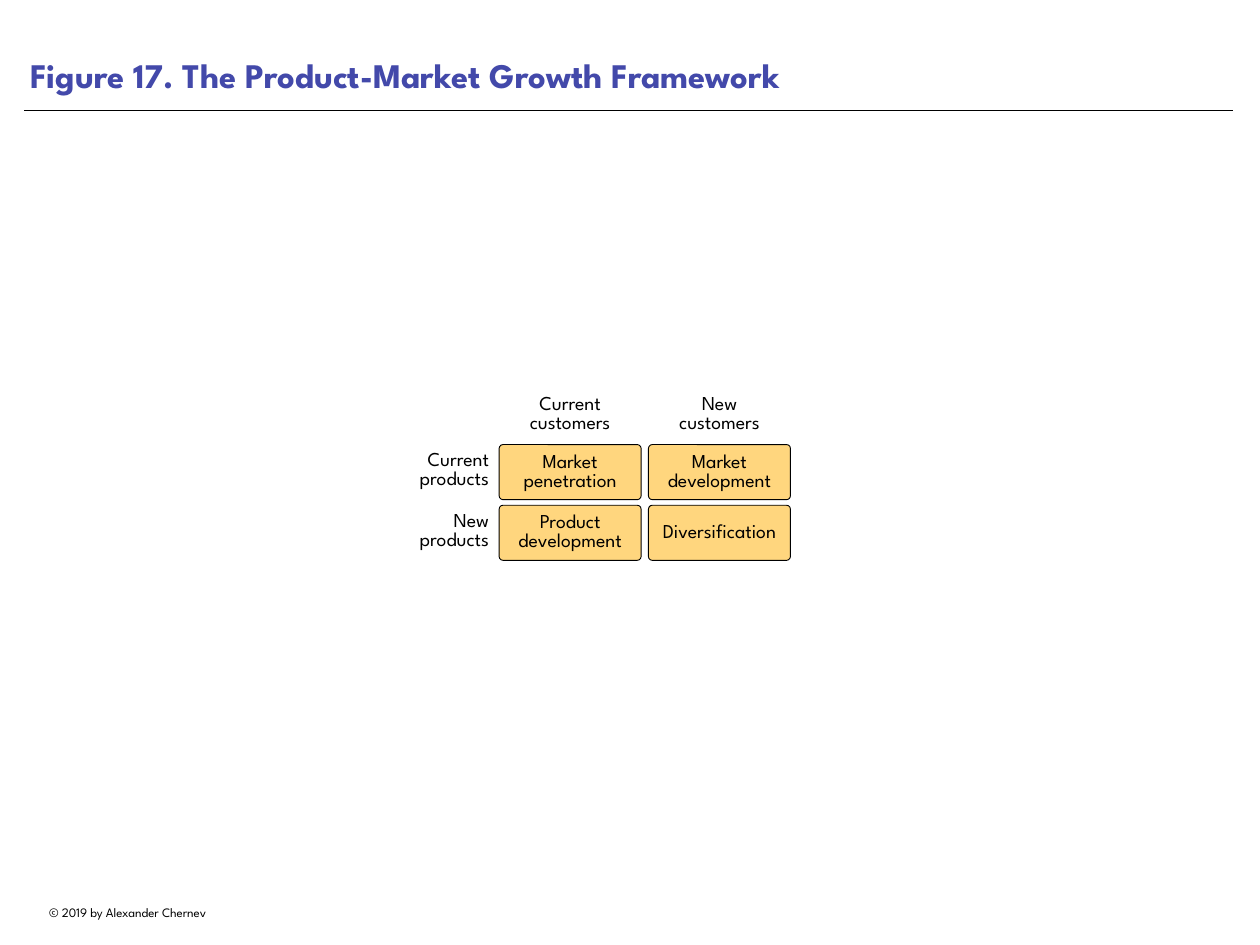
"""Build the product-market growth framework slide."""
from lxml.etree import SubElement
from pptx import Presentation
from pptx.dml.color import RGBColor
from pptx.enum.shapes import MSO_CONNECTOR, MSO_SHAPE
from pptx.enum.text import MSO_ANCHOR, PP_ALIGN
from pptx.oxml.ns import qn
from pptx.util import Cm, Pt

TITLE = "Figure 17. The Product-Market Growth Framework"
COPYRIGHT = "© 2019 by Alexander Chernev"
CUSTOMERS = ["Current customers", "New customers"]
PRODUCTS = ["Current products", "New products"]
STRATEGIES = [
    ["Market penetration", "Market development"],
    ["Product development", "Diversification"],
]

COLORS = {"title": "4349AA", "text": "000000", "line": "000000", "cell": "FFD67E"}
FONT = "League Spartan"
LABEL = {"size": 16, "spacing": 0.8, "inset": 0.1}

GRID_LEFT, GRID_TOP = 14.31, 12.75
CELL_WIDTH, CELL_HEIGHT = 4.07, 1.58
COLUMN_STEP, ROW_STEP = 4.28, 1.74
LABEL_HEIGHT = 1.3
CUSTOMER_TOP, CUSTOMER_WIDTH = 11.23, 3.61
PRODUCT_LEFT, PRODUCT_WIDTH = 11.43, 2.69
PRODUCT_OFFSET = 0.1
MARGIN_LEFT, CONTENT_WIDTH, RULE_TOP = 0.69, 34.67, 3.15


def color(name):
    return RGBColor.from_string(COLORS[name])


def write(shape, text, size, align=PP_ALIGN.CENTER, anchor=MSO_ANCHOR.MIDDLE,
          tint="text", bold=False, spacing=1.0, inset=0.18, wrap=True):
    frame = shape.text_frame
    margin = Cm(inset)
    frame_format = {
        "word_wrap": wrap, "vertical_anchor": anchor,
        "margin_left": margin, "margin_right": margin,
        "margin_top": margin, "margin_bottom": margin,
    }
    paragraph = frame.paragraphs[0]
    paragraph.text = text
    font = paragraph.runs[0].font
    formats = [
        (frame, frame_format),
        (paragraph, {"alignment": align, "line_spacing": spacing}),
        (font, {"name": FONT, "size": Pt(size), "bold": bold}),
    ]
    for target, values in formats:
        for name, value in values.items():
            setattr(target, name, value)
    font.color.rgb = color(tint)


def add_text(slide, text, left, top, width, height, **text_format):
    box = slide.shapes.add_textbox(Cm(left), Cm(top), Cm(width), Cm(height))
    write(box, text, **text_format)


def add_rule(slide):
    rule = slide.shapes.add_connector(
        MSO_CONNECTOR.STRAIGHT, Cm(MARGIN_LEFT), Cm(RULE_TOP),
        Cm(MARGIN_LEFT + CONTENT_WIDTH), Cm(RULE_TOP))
    rule.line.color.rgb = color("line")
    rule.line.width = Pt(0.5)
    SubElement(rule._element.spPr, qn("a:effectLst"))


def add_cell(slide, text, left, top):
    cell = slide.shapes.add_shape(
        MSO_SHAPE.ROUNDED_RECTANGLE,
        Cm(left), Cm(top), Cm(CELL_WIDTH), Cm(CELL_HEIGHT))
    cell.adjustments[0] = 0.07
    cell.shadow.inherit = False
    cell.fill.solid()
    cell.fill.fore_color.rgb = color("cell")
    cell.line.color.rgb = color("line")
    cell.line.width = Pt(0.75)
    write(cell, text, **LABEL)


def add_matrix(slide):
    for row, (product, strategies) in enumerate(zip(PRODUCTS, STRATEGIES)):
        top = GRID_TOP + row * ROW_STEP
        add_text(slide, product, PRODUCT_LEFT, top + PRODUCT_OFFSET,
                 PRODUCT_WIDTH, LABEL_HEIGHT, align=PP_ALIGN.RIGHT, **LABEL)
        for column, strategy in enumerate(strategies):
            add_cell(slide, strategy, GRID_LEFT + column * COLUMN_STEP, top)
    for column, customer in enumerate(CUSTOMERS):
        left = GRID_LEFT + column * COLUMN_STEP + (CELL_WIDTH - CUSTOMER_WIDTH) / 2
        add_text(slide, customer, left, CUSTOMER_TOP,
                 CUSTOMER_WIDTH, LABEL_HEIGHT, **LABEL)


def main():
    presentation = Presentation()
    presentation.slide_width = Cm(36.12)
    presentation.slide_height = Cm(27.1)
    slide = presentation.slides.add_slide(presentation.slide_layouts[6])
    add_text(slide, COPYRIGHT, MARGIN_LEFT, 25.81, 5.94, 0.71,
             size=10.5, wrap=False)
    add_rule(slide)
    add_text(slide, TITLE, MARGIN_LEFT, 0, CONTENT_WIDTH, 2.92, size=28,
             align=PP_ALIGN.LEFT, anchor=MSO_ANCHOR.BOTTOM, tint="title", bold=True)
    add_matrix(slide)
    presentation.save("out.pptx")


if __name__ == "__main__":
    main()
